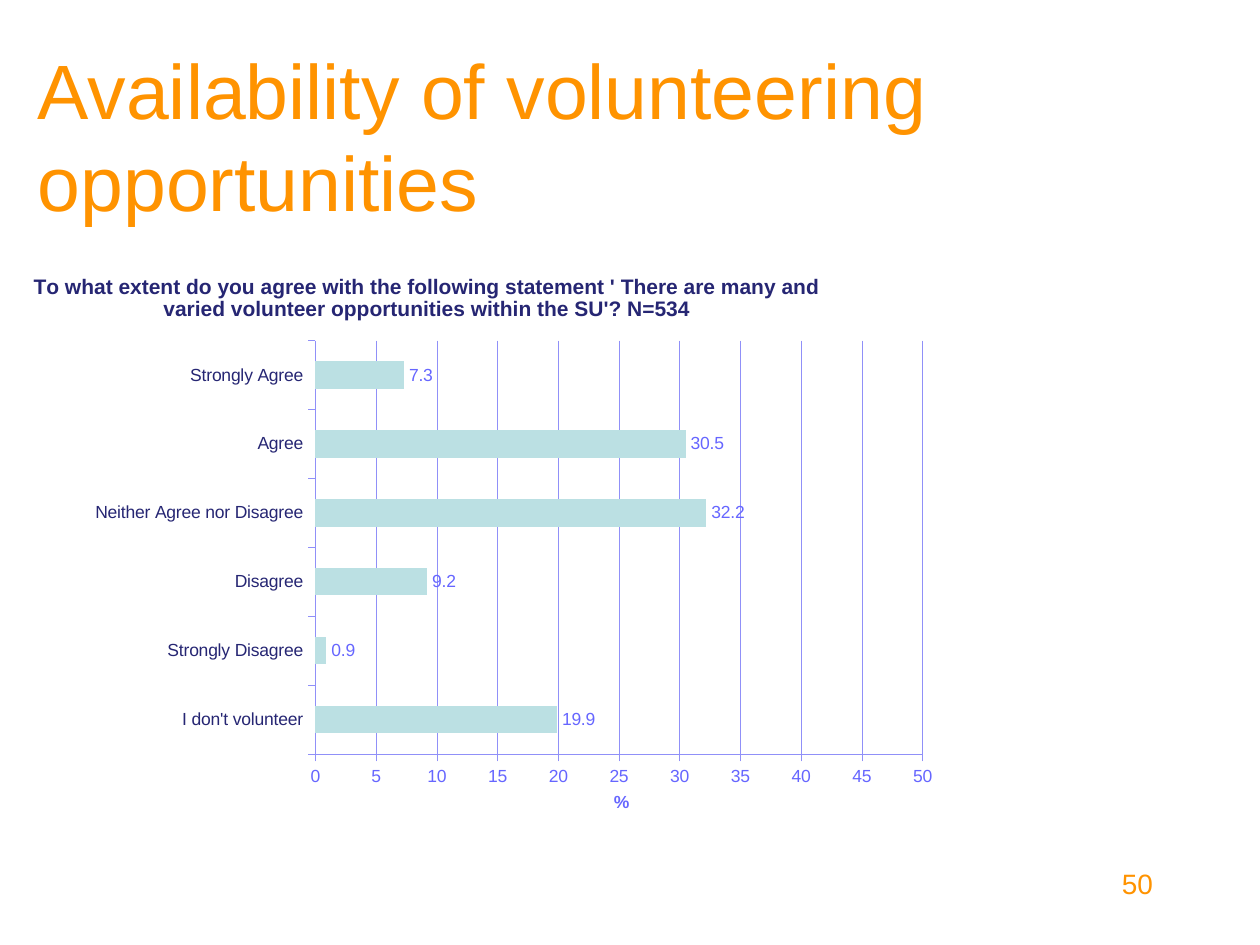
from lxml.etree import SubElement
from pptx import Presentation
from pptx.chart.data import CategoryChartData
from pptx.dml.color import RGBColor
from pptx.enum.chart import XL_CHART_TYPE, XL_LABEL_POSITION, XL_TICK_MARK
from pptx.enum.text import MSO_ANCHOR, PP_ALIGN
from pptx.oxml.ns import qn
from pptx.util import Cm, Pt

COLOURS = {"heading": "FF9300", "ink": "262673", "axis": "6666FF",
           "grid": "9090F8", "bar": "BBE0E3"}
FONT = "Arial"
QUESTION = ("To what extent do you agree with the following statement ' There are many and "
            "varied volunteer opportunities within the SU'? N=534")
RESPONSES = {
    "I don't volunteer": 19.9,
    "Strongly Disagree": 0.9,
    "Disagree": 9.2,
    "Neither Agree nor Disagree": 32.2,
    "Agree": 30.5,
    "Strongly Agree": 7.3,
}


def colour(name):
    return RGBColor.from_string(COLOURS[name])


def style_font(font, size, colour_name, bold=False):
    font.name = FONT
    font.size = Pt(size)
    font.bold = bold
    font.color.rgb = colour(colour_name)


def add_text(slide, box, text, size, align=PP_ALIGN.LEFT, anchor=MSO_ANCHOR.TOP):
    frame = slide.shapes.add_textbox(*map(Cm, box)).text_frame
    frame.word_wrap = True
    frame.vertical_anchor = anchor
    paragraph = frame.paragraphs[0]
    paragraph.alignment = align
    run = paragraph.add_run()
    run.text = text
    style_font(run.font, size, "heading")


def place_in_chart(parent, chart_box, x, y, w=None, h=None):
    """Fix a chart part's place, given in cm from the chart's top left corner."""
    _, _, chart_width, chart_height = chart_box
    layout = parent.find(qn("c:layout"))
    if layout is None:
        layout = SubElement(parent, qn("c:layout"))
        text = parent.find(qn("c:tx"))
        if text is None:
            parent.insert(0, layout)
        else:
            text.addnext(layout)
    for child in list(layout):
        layout.remove(child)
    settings = {"xMode": "edge", "yMode": "edge", "x": x / chart_width, "y": y / chart_height}
    if w is not None:
        settings = {"layoutTarget": "inner", **settings,
                    "w": w / chart_width, "h": h / chart_height}
    manual = SubElement(layout, qn("c:manualLayout"))
    for tag, value in settings.items():
        SubElement(manual, qn(f"c:{tag}")).set("val", str(value))


def add_chart_title(title, chart_box, text, size, colour_name, x, y):
    run = title.text_frame.paragraphs[0].add_run()
    run.text = text
    style_font(run.font, size, colour_name, bold=True)
    place_in_chart(title._element, chart_box, x, y)


def style_line(line):
    line.color.rgb = colour("grid")
    line.width = Pt(0.25)


def style_axis(axis, colour_name):
    axis.major_tick_mark = XL_TICK_MARK.OUTSIDE
    axis.minor_tick_mark = XL_TICK_MARK.NONE
    style_font(axis.tick_labels.font, 10, colour_name)
    style_line(axis.format.line)


def add_response_chart(slide, box):
    data = CategoryChartData(number_format="0.0")
    data.categories = list(RESPONSES)
    data.add_series("Series 1", list(RESPONSES.values()))
    chart = slide.shapes.add_chart(XL_CHART_TYPE.BAR_CLUSTERED, *map(Cm, box), data).chart
    style_font(chart.font, 10, "axis")
    chart.has_legend = False
    chart.has_title = True
    add_chart_title(chart.chart_title, box, QUESTION, 12, "ink", 0.14, 0.11)

    responses, percent = chart.category_axis, chart.value_axis
    style_axis(responses, "ink")
    responses.has_major_gridlines = False
    style_axis(percent, "axis")
    percent.minimum_scale, percent.maximum_scale, percent.major_unit = 0, 50, 5
    percent.tick_labels.number_format = "0"
    percent.tick_labels.number_format_is_linked = False
    percent.has_major_gridlines = True
    style_line(percent.major_gridlines.format.line)
    percent.has_title = True
    add_chart_title(percent.axis_title, box, "%", 10, "axis", 11.85, 10.55)

    plot = chart.plots[0]
    plot.gap_width = 150
    plot.vary_by_categories = False
    place_in_chart(plot._element.getparent(), box, 5.9, 1.54, 12.24, 8.33)
    bars = plot.series[0].format
    bars.fill.solid()
    bars.fill.fore_color.rgb = colour("bar")
    bars.line.fill.background()
    plot.has_data_labels = True
    labels = plot.data_labels
    labels.show_value = True
    labels.number_format = "0.0"
    labels.number_format_is_linked = False
    labels.position = XL_LABEL_POSITION.OUTSIDE_END
    style_font(labels.font, 10, "axis")


def main():
    deck = Presentation()
    deck.slide_width, deck.slide_height = Cm(25.4), Cm(19.05)
    slide = deck.slides.add_slide(deck.slide_layouts[6])
    add_text(slide, (0.51, 1.12, 21.59, 3.18), "Availability of volunteering opportunities", 44,
             anchor=MSO_ANCHOR.MIDDLE)
    add_response_chart(slide, (0.46, 5.33, 21.44, 11.2))
    add_text(slide, (18.21, 17.35, 5.28, 1.27), "50", 16, align=PP_ALIGN.RIGHT)
    deck.save("out.pptx")


if __name__ == "__main__":
    main()
